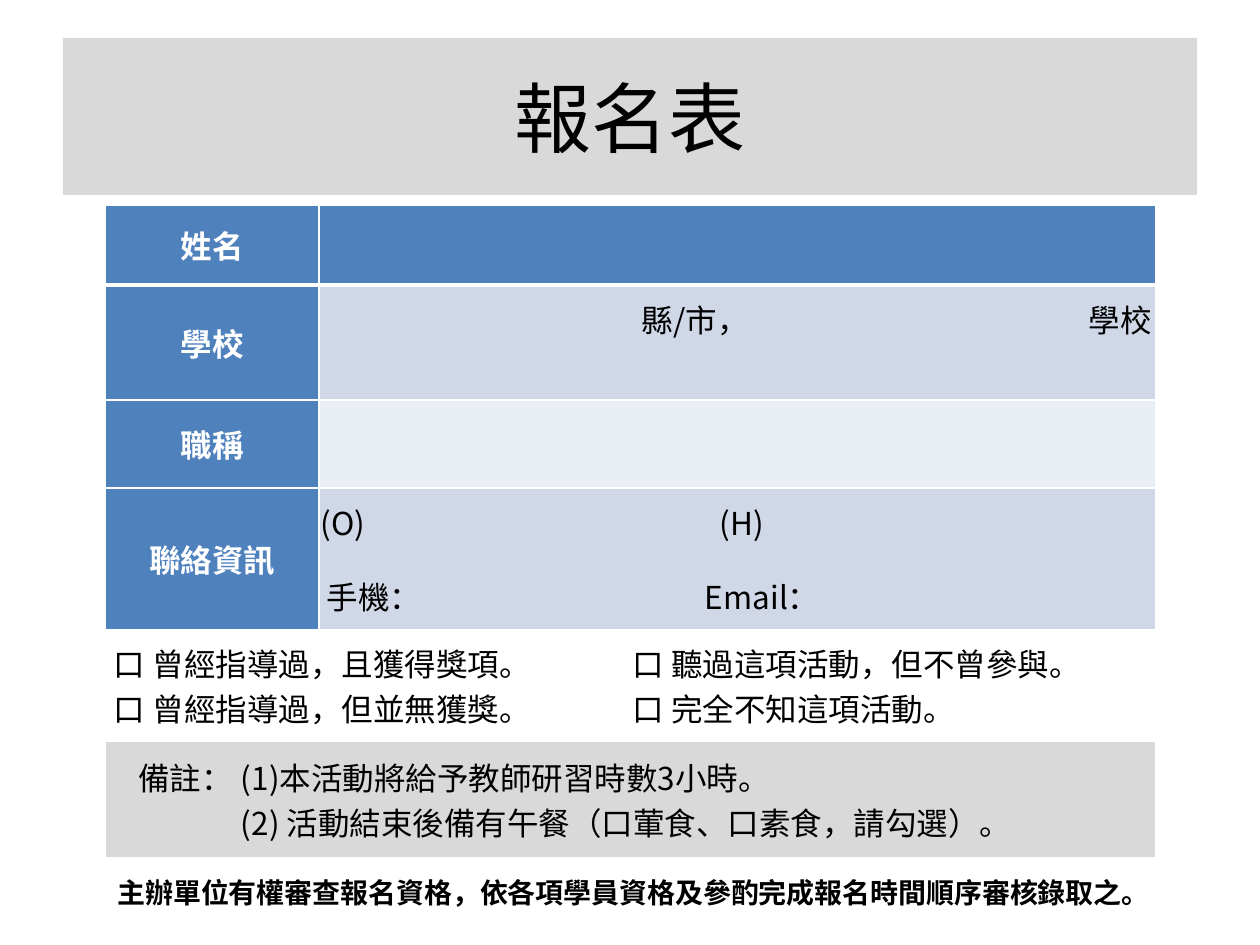
import dataclasses

import lxml.etree
import pptx
import pptx.dml.color
import pptx.enum.shapes
import pptx.enum.text
import pptx.oxml.ns
import pptx.util

SCALE = 914400 / 126
ANCHOR = pptx.enum.text.MSO_ANCHOR
ALIGN = pptx.enum.text.PP_ALIGN


@dataclasses.dataclass(frozen=True)
class Theme:
    font: str = "Noto Sans CJK SC"
    black: str = "000000"
    white: str = "FFFFFF"
    gray: str = "D9D9D9"
    blue: str = "4F81BD"
    band: str = "D0D8E8"
    light: str = "E9EDF4"
    title: int = 44
    body: int = 18
    note: int = 16


THEME = Theme()


def px(length):
    return pptx.util.Emu(round(length * SCALE))


def color(value):
    return pptx.dml.color.RGBColor.from_string(value)


def add_element(parent, tag, **attributes):
    return lxml.etree.SubElement(parent, pptx.oxml.ns.qn(tag), attributes)


def paint(target, fill):
    if fill:
        target.fill.solid()
        target.fill.fore_color.rgb = color(fill)
    else:
        target.fill.background()


def style_para(para, size, ink=THEME.black, bold=False, align=ALIGN.LEFT):
    para.alignment = align
    for span in para.runs:
        span.font.size = pptx.util.Pt(size)
        span.font.name = THEME.font
        span.font.bold = bold
        span.font.color.rgb = color(ink)
        add_element(span.font._element, "a:ea", typeface=THEME.font)


def set_tabs(para, stops):
    tabs = add_element(para._p.get_or_add_pPr(), "a:tabLst")
    for stop in stops:
        add_element(tabs, "a:tab", pos=str(px(stop)), algn="l")


def border_cell(cell, row):
    properties = cell._tc.get_or_add_tcPr()
    widths = {"L": 1, "R": 1, "T": 3 if row == 1 else 1, "B": 3 if row == 0 else 1}
    for side, width in widths.items():
        line = add_element(properties, f"a:ln{side}", w=str(pptx.util.Pt(width)))
        add_element(add_element(line, "a:solidFill"), "a:srgbClr", val=THEME.white)


def add_title(page):
    box = page.shapes.add_shape(
        pptx.enum.shapes.MSO_SHAPE.RECTANGLE, px(63), px(38), px(1134), px(157))
    box.shadow.inherit = False
    box.line.fill.background()
    paint(box, THEME.gray)
    box.text_frame.text = "報名表"
    box.text_frame.vertical_anchor = ANCHOR.MIDDLE
    style_para(box.text_frame.paragraphs[0], THEME.title, align=ALIGN.CENTER)


def add_grid(page, widths, heights, fills):
    frame = page.shapes.add_table(
        len(heights), len(widths), px(105), px(205), px(sum(widths)), px(sum(heights)))
    table = frame.table
    table.first_row = table.horz_banding = False
    for column, width in zip(table.columns, widths):
        column.width = px(width)
    for row, height in enumerate(heights):
        table.rows[row].height = px(height)
        for column in range(len(widths)):
            cell = table.cell(row, column)
            border_cell(cell, row)
            paint(cell, fills[row][min(column, 1)])
    return table


def write_cell(cell, text, left=2, anchor=ANCHOR.MIDDLE, **style):
    cell.margin_left, cell.margin_right = px(left), px(2)
    cell.margin_top = cell.margin_bottom = 0
    cell.vertical_anchor = anchor
    cell.text_frame.text = text
    for para in cell.text_frame.paragraphs:
        style_para(para, THEME.body, **style)
    return cell.text_frame.paragraphs


def write_school(cell):
    cell.text_frame.text = ""
    para = write_cell(cell, "", left=9, anchor=ANCHOR.TOP)[0]
    para.line_spacing = 1.25
    set_tabs(para, (314, 761))
    for text in ("\t", "縣/市，", "\t", "學校"):
        span = para.add_run()
        span.text = text
        span.font.underline = text == "\t"
    style_para(para, THEME.body)


def write_contact(cell):
    phones, online = write_cell(cell, "(O)\t(H)\n\t手機：\tEmail：")
    online.line_spacing = 1.25
    online.space_before = pptx.util.Pt(10)
    set_tabs(phones, (399,))
    set_tabs(online, (6, 384))


def add_form(page):
    header, plain = (THEME.blue, THEME.blue), (None, None)
    fills = (header, (THEME.blue, THEME.band), (THEME.blue, THEME.light),
             (THEME.blue, THEME.band), plain, (THEME.gray, THEME.gray))
    table = add_grid(page, (214, 312, 525), (80, 115, 88, 142, 111, 117), fills)
    for row, label in enumerate(("姓名", "學校", "職稱", "聯絡資訊")):
        table.cell(row, 1).merge(table.cell(row, 2))
        write_cell(table.cell(row, 0), label, ink=THEME.white, bold=True, align=ALIGN.CENTER)
    table.cell(4, 0).merge(table.cell(4, 1))
    table.cell(5, 0).merge(table.cell(5, 2))
    write_school(table.cell(1, 1))
    write_contact(table.cell(3, 1))
    write_cell(table.cell(4, 0), "口 曾經指導過，且獲得獎項。\n口 曾經指導過，但並無獲獎。", left=9)
    write_cell(table.cell(4, 2), "口 聽過這項活動，但不曾參與。\n口 完全不知這項活動。")
    remarks = write_cell(
        table.cell(5, 0),
        "備註：\t(1)本活動將給予教師研習時數3小時。\n"
        "\t(2) 活動結束後備有午餐（口葷食、口素食，請勾選）。", left=33)
    for para in remarks:
        set_tabs(para, (103,))


def add_footer(page):
    box = page.shapes.add_textbox(px(105), px(869), px(1062), px(47))
    box.text_frame.word_wrap = True
    box.text_frame.text = "主辦單位有權審查報名資格，依各項學員資格及參酌完成報名時間順序審核錄取之。"
    style_para(box.text_frame.paragraphs[0], THEME.note, bold=True)


def main():
    deck = pptx.Presentation()
    deck.slide_width, deck.slide_height = px(1260), px(945)
    page = deck.slides.add_slide(deck.slide_layouts[6])
    add_title(page)
    add_form(page)
    add_footer(page)
    deck.save("out.pptx")


if __name__ == "__main__":
    main()
